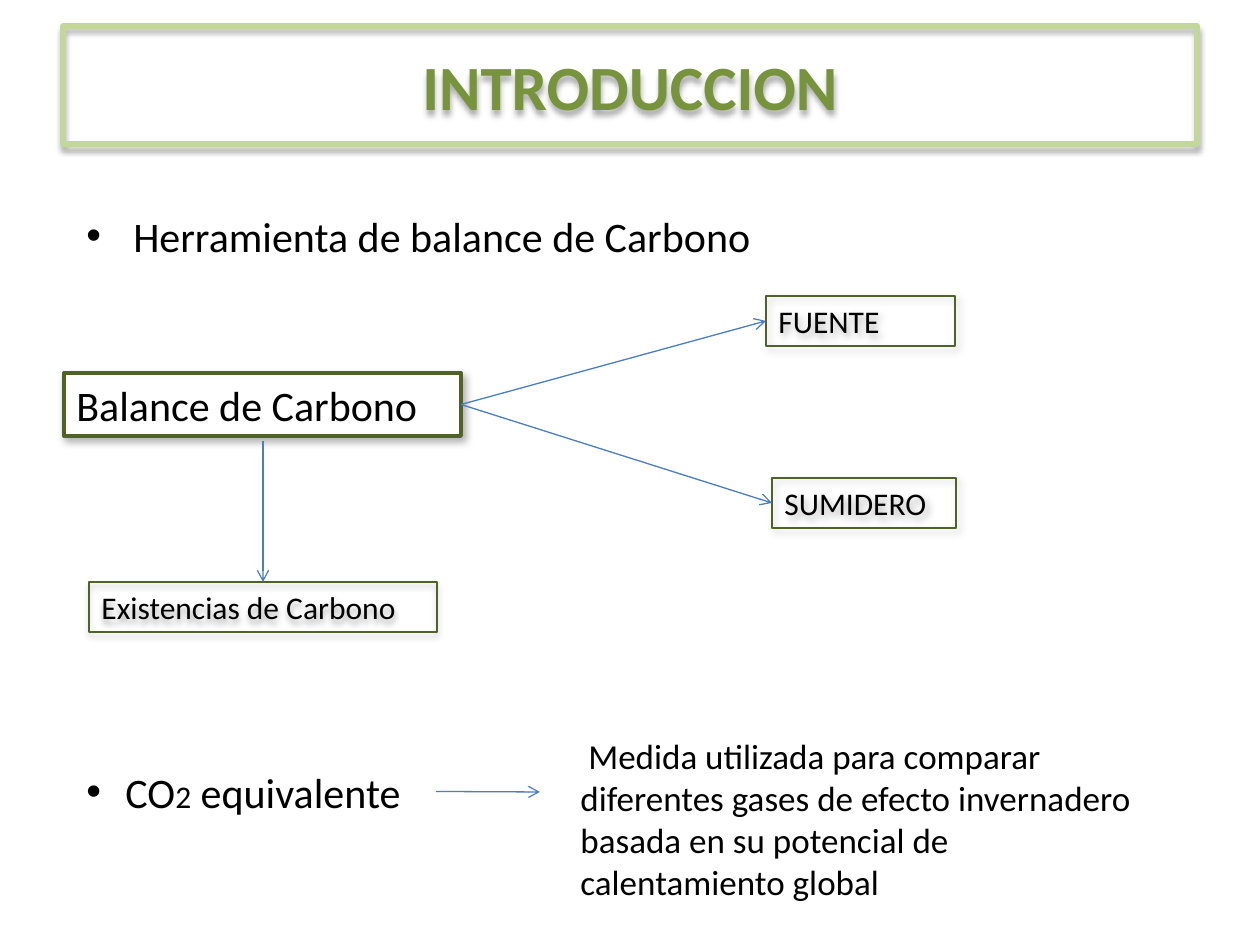
from dataclasses import dataclass
from typing import Optional

from lxml import etree
from pptx import Presentation
from pptx import util as u
from pptx.dml.color import RGBColor
from pptx.enum import shapes, text
from pptx.oxml import ns

PX = u.Inches(1) / 126


@dataclass(frozen=True)
class Theme:
    font: str = "Calibri"
    ink: str = "000000"
    title: str = "77933C"
    title_border: str = "C3D69B"
    box_border: str = "4F6228"
    arrow: str = "4B7EBC"
    paper: str = "FFFFFF"
    title_size: int = 36
    heading_size: int = 24
    body_size: int = 20
    label_size: int = 18


THEME = Theme()


@dataclass(frozen=True)
class Shadow:
    opacity: int  # percent
    blur: float  # points
    distance: float  # points
    direction: int  # degrees


BELOW = Shadow(32, 3.5, 2.2, 90)
DIAGONAL = Shadow(30, 4.5, 2.6, 53)


@dataclass(frozen=True)
class Box:
    left: int
    top: int
    width: int
    height: int
    runs: tuple[tuple[str, int], ...]
    border: Optional[str] = None
    border_width: float = 0.75
    fill: Optional[str] = None
    shadow: Optional[Shadow] = None
    bullet_indent: int = 0


@dataclass(frozen=True)
class Arrow:
    """Each end is a point, or a box name with a connection site."""
    begin: tuple
    end: tuple


RIGHT, LEFT, TOP = 3, 1, 0

TITLE = Box(63, 26, 1134, 118, (("INTRODUCCION", THEME.title_size),),
            THEME.title_border, 3, shadow=BELOW)


def label(left: int, top: int, width: int, caption: str, shadow: Shadow) -> Box:
    return Box(left, top, width, 50, ((caption, THEME.label_size),),
               THEME.box_border, shadow=shadow)


BOXES = {
    "balance": Box(64, 373, 397, 63, (("Balance de Carbono", THEME.heading_size),),
                   THEME.box_border, 2.25, THEME.paper, DIAGONAL),
    "source": label(766, 296, 189, "FUENTE", DIAGONAL),
    "sink": label(772, 478, 184, "SUMIDERO", DIAGONAL),
    "stocks": label(89, 582, 348, "Existencias de Carbono", BELOW),
    "tool": Box(74, 204, 693, 102,
                (("Herramienta de balance de Carbono", THEME.heading_size),),
                bullet_indent=47),
    "equivalent": Box(74, 760, 362, 63,
                      (("CO", THEME.heading_size), ("2", THEME.label_size),
                       (" equivalente", THEME.heading_size)),
                      bullet_indent=39),
    "definition": Box(568, 728, 586, 183,
                      ((" Medida utilizada para comparar diferentes gases de efecto "
                        "invernadero basada en su potencial de calentamiento global",
                        THEME.body_size),)),
}

ARROWS = (
    Arrow(("balance", RIGHT), ("source", LEFT)),
    Arrow(("balance", RIGHT), ("sink", LEFT)),
    Arrow((263, 441), ("stocks", TOP)),
    Arrow(("equivalent", RIGHT), (540, 792)),
)


def px(length: int) -> u.Emu:
    return u.Emu(round(length * PX))


def rgb(value: str) -> RGBColor:
    return RGBColor.from_string(value)


def add_element(parent, tag: str, **attributes):
    values = {name: str(value) for name, value in attributes.items()}
    return etree.SubElement(parent, ns.qn(tag), values)


def add_shadow(shape, shadow: Shadow) -> None:
    effects = shape._element.spPr.find(ns.qn("a:effectLst"))
    outer = add_element(effects, "a:outerShdw", blurRad=u.Pt(shadow.blur),
                        dist=u.Pt(shadow.distance), dir=shadow.direction * 60000,
                        algn="ctr", rotWithShape=0)
    color = add_element(outer, "a:srgbClr", val="000000")
    add_element(color, "a:alpha", val=shadow.opacity * 1000)


def add_bullet(paragraph, indent: int) -> None:
    properties = paragraph._p.get_or_add_pPr()
    properties.set("marL", str(px(indent)))
    properties.set("indent", str(-px(indent)))
    bullet_font = etree.Element(ns.qn("a:buFont"), typeface="Arial")
    bullet = etree.Element(ns.qn("a:buChar"), char="•")
    properties.insert(0, bullet_font)
    properties.insert(1, bullet)


def add_box(slide, box: Box):
    frame = [px(v) for v in (box.left, box.top, box.width, box.height)]
    if box.border:
        shape = slide.shapes.add_shape(shapes.MSO_SHAPE.RECTANGLE, *frame)
        shape.shadow.inherit = False
        shape.line.color.rgb = rgb(box.border)
        shape.line.width = u.Pt(box.border_width)
        if box.fill:
            shape.fill.solid()
            shape.fill.fore_color.rgb = rgb(box.fill)
        else:
            shape.fill.background()
    else:
        shape = slide.shapes.add_textbox(*frame)
    if box.shadow:
        add_shadow(shape, box.shadow)

    text_frame = shape.text_frame
    text_frame.word_wrap = True
    text_frame.vertical_anchor = text.MSO_ANCHOR.TOP
    text_frame.auto_size = text.MSO_AUTO_SIZE.SHAPE_TO_FIT_TEXT
    paragraph = text_frame.paragraphs[0]
    paragraph.alignment = text.PP_ALIGN.LEFT
    paragraph.font.name = THEME.font
    paragraph.font.color.rgb = rgb(THEME.ink)
    paragraph.font.size = u.Pt(box.runs[0][1])
    for content, size in box.runs:
        run = paragraph.add_run()
        run.text = content
        if len(box.runs) > 1:
            run.font.size = u.Pt(size)
    if box.bullet_indent:
        add_bullet(paragraph, box.bullet_indent)
    return shape


def add_title(slide) -> None:
    text_frame = add_box(slide, TITLE).text_frame
    text_frame.auto_size = text.MSO_AUTO_SIZE.NONE
    text_frame.vertical_anchor = text.MSO_ANCHOR.MIDDLE
    paragraph = text_frame.paragraphs[0]
    paragraph.alignment = text.PP_ALIGN.CENTER
    paragraph.font.bold = True
    paragraph.font.color.rgb = rgb(THEME.title)
    outline = etree.Element(ns.qn("a:ln"), w=str(u.Pt(0.83)))
    add_element(add_element(outline, "a:solidFill"), "a:srgbClr", val=THEME.title)
    paragraph.runs[0]._r.get_or_add_rPr().insert(0, outline)


def add_arrow(slide, arrow: Arrow, drawn: dict) -> None:
    points = [(0, 0) if end[0] in drawn else end for end in (arrow.begin, arrow.end)]
    connector = slide.shapes.add_connector(
        shapes.MSO_CONNECTOR.STRAIGHT, *(px(v) for point in points for v in point))
    for end, connect in ((arrow.begin, connector.begin_connect),
                         (arrow.end, connector.end_connect)):
        if end[0] in drawn:
            connect(drawn[end[0]], end[1])
    connector.line.color.rgb = rgb(THEME.arrow)
    connector.line.width = u.Pt(0.75)
    add_element(connector.line._get_or_add_ln(), "a:tailEnd", type="arrow")
    add_element(connector._element.spPr, "a:effectLst")


def main() -> None:
    presentation = Presentation()
    presentation.slide_width, presentation.slide_height = px(1260), px(945)
    slide = presentation.slides.add_slide(presentation.slide_layouts[6])
    add_title(slide)
    drawn = {name: add_box(slide, box) for name, box in BOXES.items()}
    for arrow in ARROWS:
        add_arrow(slide, arrow, drawn)
    presentation.save("out.pptx")


if __name__ == "__main__":
    main()
